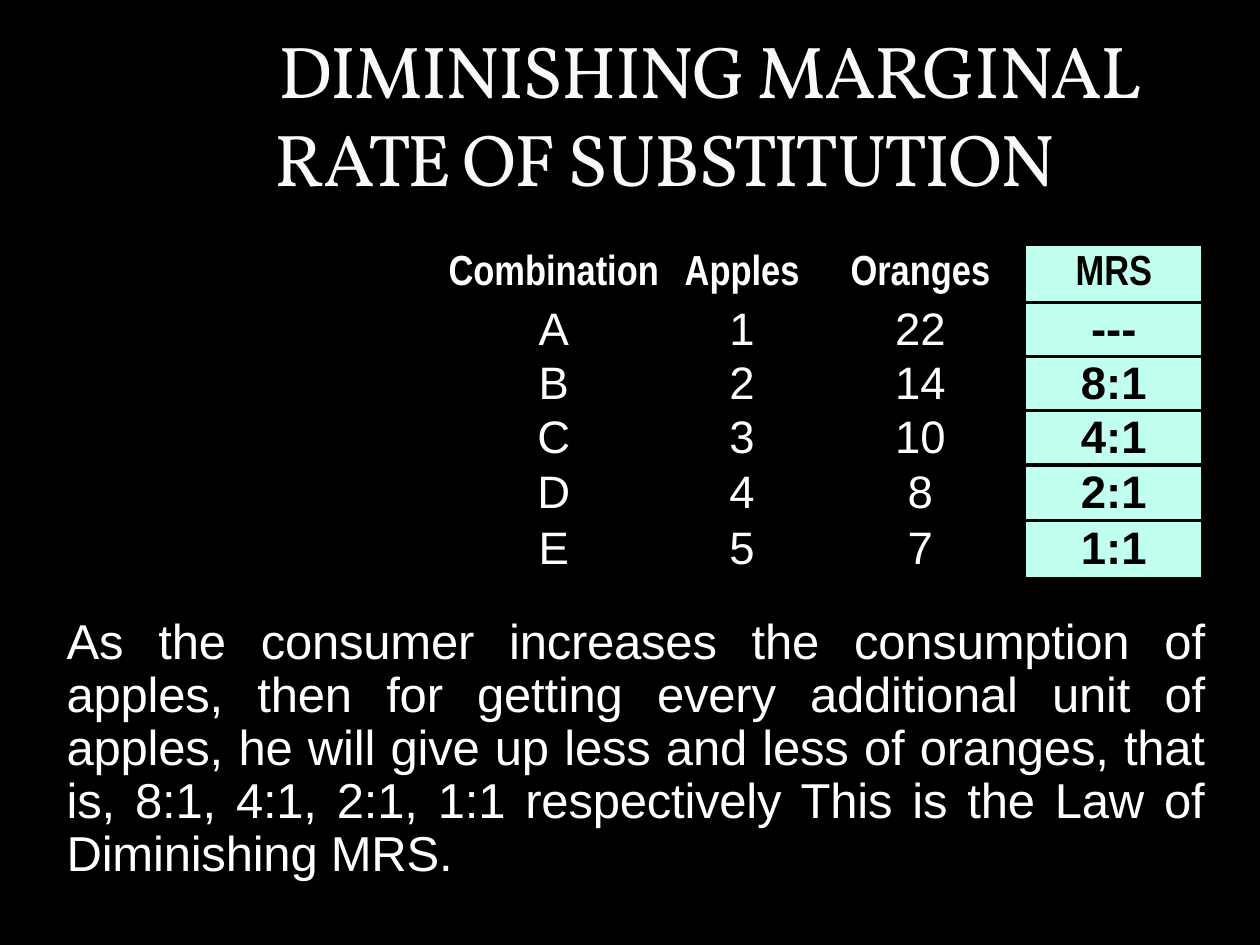
from dataclasses import dataclass
from typing import Optional

from lxml.etree import SubElement
from pptx import Presentation
from pptx.dml.color import RGBColor
from pptx.enum.text import MSO_ANCHOR, MSO_AUTO_SIZE, PP_ALIGN
from pptx.oxml.ns import qn
from pptx.util import Pt

BLACK, WHITE, MINT = "000000", "FFFFFF", "C1FFEE"


@dataclass(frozen=True)
class TextStyle:
    family: str
    size: float
    color: str = WHITE
    bold: bool = False


@dataclass(frozen=True)
class Box:
    left: float
    top: float
    width: float
    height: float


@dataclass(frozen=True)
class Combination:
    label: str
    apples: str
    oranges: str
    mrs: str
    height: float
    line_height: float

    def values(self) -> tuple:
        return self.label, self.apples, self.oranges, self.mrs


COMBINATIONS = [
    Combination("Combination", "Apples", "Oranges", "MRS", 33.1, 28.4),
    Combination("A", "1", "22", "---", 31, 30.2),
    Combination("B", "2", "14", "8:1", 31, 30.2),
    Combination("C", "3", "10", "4:1", 31, 30.2),
    Combination("D", "4", "8", "2:1", 31.7, 30.6),
    Combination("E", "5", "7", "1:1", 33.1, 30.6),
]
COLUMN_WIDTHS = (130.3, 85, 118.8, 102.2)


def color(value: str) -> RGBColor:
    return RGBColor.from_string(value)


def apply_style(paragraph, style: TextStyle) -> None:
    font = paragraph.font
    font.name = style.family
    font.size = Pt(style.size)
    font.bold = style.bold
    font.color.rgb = color(style.color)


def fill_placeholder(placeholder, box: Box, wording: str, style: TextStyle,
                     align: PP_ALIGN, anchor: MSO_ANCHOR, top_inset: float,
                     margin: float, indent: float, tracking: float):
    placeholder.left, placeholder.top = Pt(box.left), Pt(box.top)
    placeholder.width, placeholder.height = Pt(box.width), Pt(box.height)
    frame = placeholder.text_frame
    frame.text = wording
    frame.word_wrap = True
    frame.auto_size = MSO_AUTO_SIZE.NONE
    frame.vertical_anchor = anchor
    frame.margin_left = frame.margin_right = frame.margin_bottom = 0
    frame.margin_top = Pt(top_inset)
    paragraph = frame.paragraphs[0]
    paragraph.alignment = align
    apply_style(paragraph, style)
    properties = paragraph._p.get_or_add_pPr()
    properties.set("marL", str(Pt(margin)))
    properties.set("indent", str(Pt(indent)))
    properties.insert(0, properties.makeelement(qn("a:buNone"), {}))
    for run in paragraph.runs:
        run._r.get_or_add_rPr().set("spc", str(round(tracking * 100)))
    return paragraph


def add_borders(cell, line_color: str, width: float) -> None:
    properties = cell._tc.get_or_add_tcPr()
    for position, side in enumerate(("a:lnL", "a:lnR", "a:lnT", "a:lnB")):
        line = properties.makeelement(qn(side), {"w": str(Pt(width))})
        paint = SubElement(line, qn("a:solidFill"))
        SubElement(paint, qn("a:srgbClr"), val=line_color)
        properties.insert(position, line)


def fill_cell(cell, wording: str, style: TextStyle, line_height: float,
              background: Optional[str]) -> None:
    cell.margin_left = cell.margin_right = 0
    cell.margin_top = cell.margin_bottom = 0
    cell.text = wording
    paragraph = cell.text_frame.paragraphs[0]
    paragraph.alignment = PP_ALIGN.CENTER
    paragraph.line_spacing = Pt(line_height)
    apply_style(paragraph, style)
    if background:
        cell.fill.solid()
        cell.fill.fore_color.rgb = color(background)
    else:
        cell.fill.background()
    add_borders(cell, BLACK, 2.25)


def add_schedule(slide, left: float, top: float) -> None:
    height = sum(row.height for row in COMBINATIONS)
    schedule = slide.shapes.add_table(
        len(COMBINATIONS), len(COLUMN_WIDTHS), Pt(left), Pt(top),
        Pt(sum(COLUMN_WIDTHS)), Pt(height)).table
    schedule.first_row = schedule.horz_banding = False
    for column, width in zip(schedule.columns, COLUMN_WIDTHS):
        column.width = Pt(width)
    for row_index, combination in enumerate(COMBINATIONS):
        schedule.rows[row_index].height = Pt(combination.height)
        header = row_index == 0
        for column_index, value in enumerate(combination.values()):
            is_mrs = column_index == len(COLUMN_WIDTHS) - 1
            style = TextStyle("Arial Narrow" if header else "Arial",
                              24 if header else 26,
                              BLACK if is_mrs else WHITE, header or is_mrs)
            fill_cell(schedule.cell(row_index, column_index), value, style,
                      combination.line_height, MINT if is_mrs else None)


def main() -> None:
    deck = Presentation()
    deck.slide_width, deck.slide_height = Pt(720), Pt(540)
    slide = deck.slides.add_slide(deck.slide_layouts[1])
    slide.background.fill.solid()
    slide.background.fill.fore_color.rgb = color(BLACK)

    heading = fill_placeholder(
        slide.shapes.title, Box(-90, 12.2, 774, 103),
        "DIMINISHING MARGINAL RATE OF SUBSTITUTION",
        TextStyle("Vollkorn", 42, "F9F9F9"), PP_ALIGN.LEFT,
        MSO_ANCHOR.BOTTOM, 0.7, 247, 2.2, -1)
    heading.space_before = Pt(1)

    add_schedule(slide, 251.3, 139.7)

    explanation = fill_placeholder(
        slide.placeholders[1], Box(37.4, 348.5, 651, 156),
        "As the consumer increases the consumption of apples, then for "
        "getting every additional unit of apples, he will give up less and "
        "less of oranges, that is, 8:1, 4:1, 2:1, 1:1 respectively This is "
        "the Law of Diminishing MRS.",
        TextStyle("Arial", 28), PP_ALIGN.JUSTIFY, MSO_ANCHOR.TOP,
        4.3, 0.7, 0, -0.1)
    explanation.line_spacing = 0.9
    explanation.space_before = Pt(4.3)

    deck.save("out.pptx")


if __name__ == "__main__":
    main()
